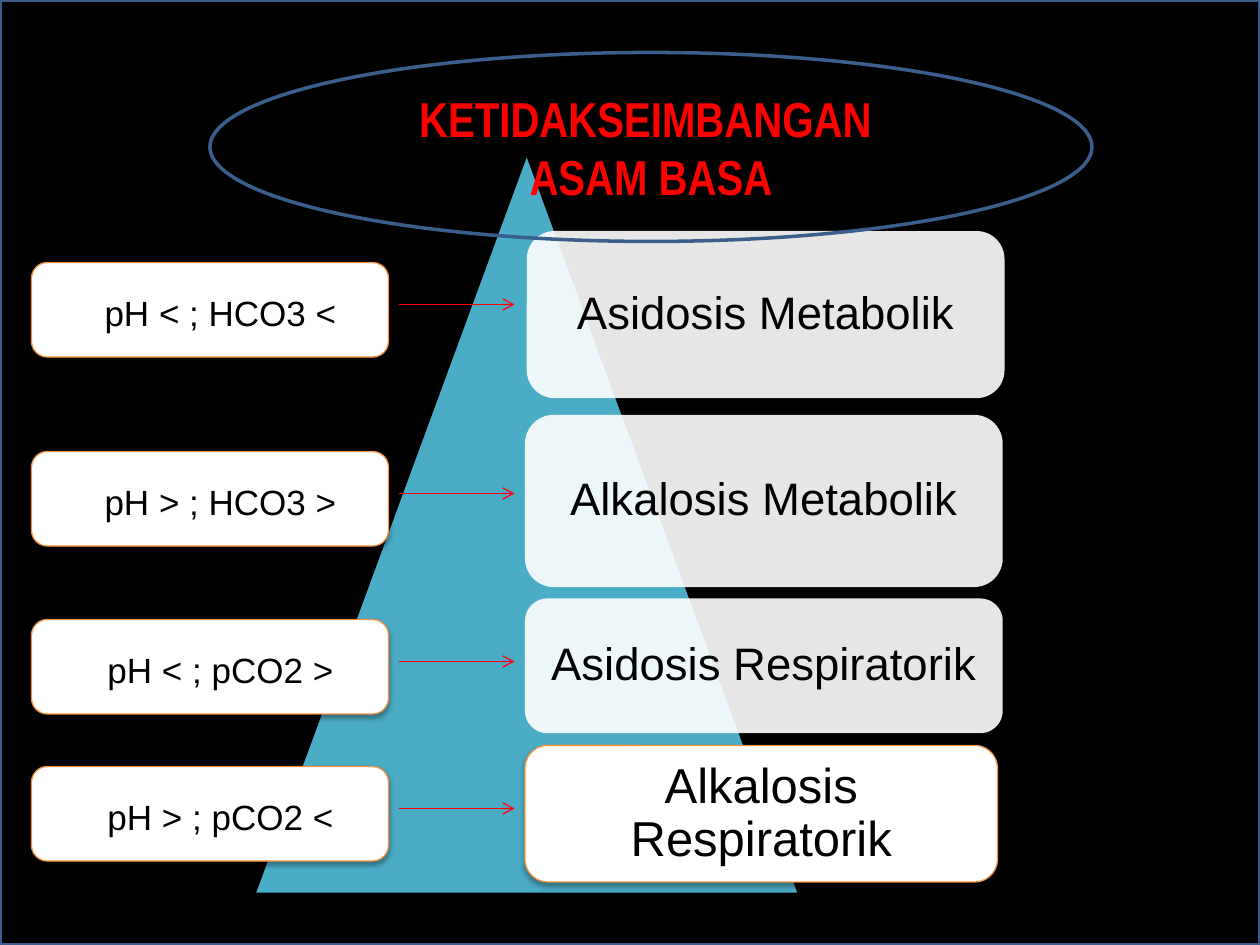
"""Build the slide on the four acid-base imbalances and their blood markers."""
from dataclasses import dataclass

from lxml.etree import SubElement
from pptx import Presentation
from pptx.dml.color import RGBColor
from pptx.enum.shapes import MSO_CONNECTOR, MSO_SHAPE
from pptx.enum.text import MSO_ANCHOR, MSO_AUTO_SIZE, PP_ALIGN
from pptx.oxml import parse_xml
from pptx.oxml.ns import nsdecls, qn
from pptx.util import Pt

BLACK = RGBColor(0x00, 0x00, 0x00)
WHITE = RGBColor(0xFF, 0xFF, 0xFF)
TEAL = RGBColor(0x4B, 0xAC, 0xC6)
NAVY = RGBColor(0x3A, 0x5F, 0x8C)
ORANGE = RGBColor(0xF6, 0x92, 0x40)
RED = RGBColor(0xFF, 0x00, 0x00)

MARKER_LEFT, MARKER_WIDTH, MARKER_HEIGHT = 18, 204, 54
ARROW_START, ARROW_END, ARROW_DROP = 228, 294, 24


@dataclass(frozen=True)
class Box:
    left: float
    top: float
    width: float
    height: float


@dataclass(frozen=True)
class Disorder:
    name: str
    box: Box
    size: int
    marker: str
    marker_top: float
    raised: bool = False


DISORDERS = [
    Disorder("Asidosis Metabolik", Box(301, 132, 273, 95.5), 26, "pH < ; HCO3 <", 150),
    Disorder("Alkalosis Metabolik", Box(300, 237, 273, 98.5), 26, "pH > ; HCO3 >", 258),
    Disorder("Asidosis Respiratorik", Box(300, 342, 273, 77), 26, "pH < ; pCO2 >", 354),
    Disorder("Alkalosis Respiratorik", Box(300, 426, 270, 78), 28, "pH > ; pCO2 <", 438, True),
]


def add_outline(sp, color: RGBColor, width: float) -> None:
    """Give a shape a solid outline."""
    sp.line.color.rgb = color
    sp.line.width = Pt(width)


def add_shadow(sp) -> None:
    """Give a shape a soft shadow straight below it."""
    effects = sp._element.spPr.find(qn("a:effectLst"))
    effects.append(parse_xml(
        f'<a:outerShdw {nsdecls("a")} blurRad="{Pt(3.1)}" dist="{Pt(1.8)}" dir="5400000" '
        'rotWithShape="0"><a:srgbClr val="000000"><a:alpha val="35000"/></a:srgbClr>'
        '</a:outerShdw>'))


def add_shape(slide, kind: MSO_SHAPE, box: Box, fill: RGBColor | None):
    """Add a preset shape without outline or shadow."""
    sp = slide.shapes.add_shape(kind, Pt(box.left), Pt(box.top), Pt(box.width), Pt(box.height))
    sp.shadow.inherit = False
    sp.line.fill.background()
    if fill is None:
        sp.fill.background()
    else:
        sp.fill.solid()
        sp.fill.fore_color.rgb = fill
    return sp


def add_card(slide, box: Box, text: str, size: int, raised: bool,
             shift_x: float = 0, shift_y: float = 0) -> None:
    """Add a rounded white card, either outlined or slightly transparent."""
    sp = add_shape(slide, MSO_SHAPE.ROUNDED_RECTANGLE, box, WHITE)
    if raised:
        add_outline(sp, ORANGE, 0.75)
        add_shadow(sp)
    else:
        color = sp._element.spPr.find(qn("a:solidFill"))[0]
        SubElement(color, qn("a:alpha")).set("val", "90000")
    tf = sp.text_frame
    tf.word_wrap = True
    tf.vertical_anchor = MSO_ANCHOR.MIDDLE
    tf.margin_left, tf.margin_right = Pt(8 + shift_x), Pt(8)
    tf.margin_top, tf.margin_bottom = Pt(8 + shift_y), Pt(8)
    p = tf.paragraphs[0]
    p.text = text
    p.alignment = PP_ALIGN.CENTER
    p.line_spacing = 0.9
    p.font.name = "Arial"
    p.font.size = Pt(size)
    p.font.color.rgb = BLACK


def add_arrow(slide, y: float) -> None:
    """Add a red arrow from a marker to its disorder."""
    line = slide.shapes.add_connector(
        MSO_CONNECTOR.STRAIGHT, Pt(ARROW_START), Pt(y), Pt(ARROW_END), Pt(y))
    add_outline(line, RED, 0.75)
    SubElement(line.line._get_or_add_ln(), qn("a:tailEnd")).set("type", "arrow")
    SubElement(line._element.spPr, qn("a:effectLst"))


def place_title(slide, box: Box) -> None:
    """Move the title placeholder to the front, inside the ellipse."""
    title = slide.shapes.title
    title.left, title.top = Pt(box.left), Pt(box.top)
    title.width, title.height = Pt(box.width), Pt(box.height)
    tf = title.text_frame
    tf.text = "KETIDAKSEIMBANGAN \nASAM BASA"
    tf.auto_size = MSO_AUTO_SIZE.NONE
    tf.word_wrap = True
    tf.vertical_anchor = MSO_ANCHOR.MIDDLE
    for p in tf.paragraphs:
        p.alignment = PP_ALIGN.CENTER
        p.space_before = Pt(0)
        p.font.name = "Arial Narrow"
        p.font.size = Pt(28)
        p.font.bold = True
        p.font.color.rgb = RED
    slide.shapes._spTree.append(title._element)


def main() -> None:
    """Draw the slide and save it."""
    prs = Presentation()
    prs.slide_width, prs.slide_height = Pt(720), Pt(540)
    slide = prs.slides.add_slide(prs.slide_layouts[5])

    backdrop = add_shape(slide, MSO_SHAPE.RECTANGLE, Box(0, 0, 720, 540), BLACK)
    add_outline(backdrop, NAVY, 2)
    triangle = add_shape(slide, MSO_SHAPE.ISOSCELES_TRIANGLE, Box(146.5, 90, 309, 420), TEAL)
    add_shadow(triangle)

    for d in DISORDERS:
        add_card(slide, d.box, d.name, d.size, d.raised)
        marker_box = Box(MARKER_LEFT, d.marker_top, MARKER_WIDTH, MARKER_HEIGHT)
        add_card(slide, marker_box, d.marker, 20, True, shift_x=12, shift_y=6)
        add_arrow(slide, d.marker_top + ARROW_DROP)

    ellipse_box = Box(120, 30, 504, 108)
    ellipse = add_shape(slide, MSO_SHAPE.OVAL, ellipse_box, None)
    add_outline(ellipse, NAVY, 2)
    place_title(slide, ellipse_box)

    prs.save("out.pptx")


if __name__ == "__main__":
    main()
